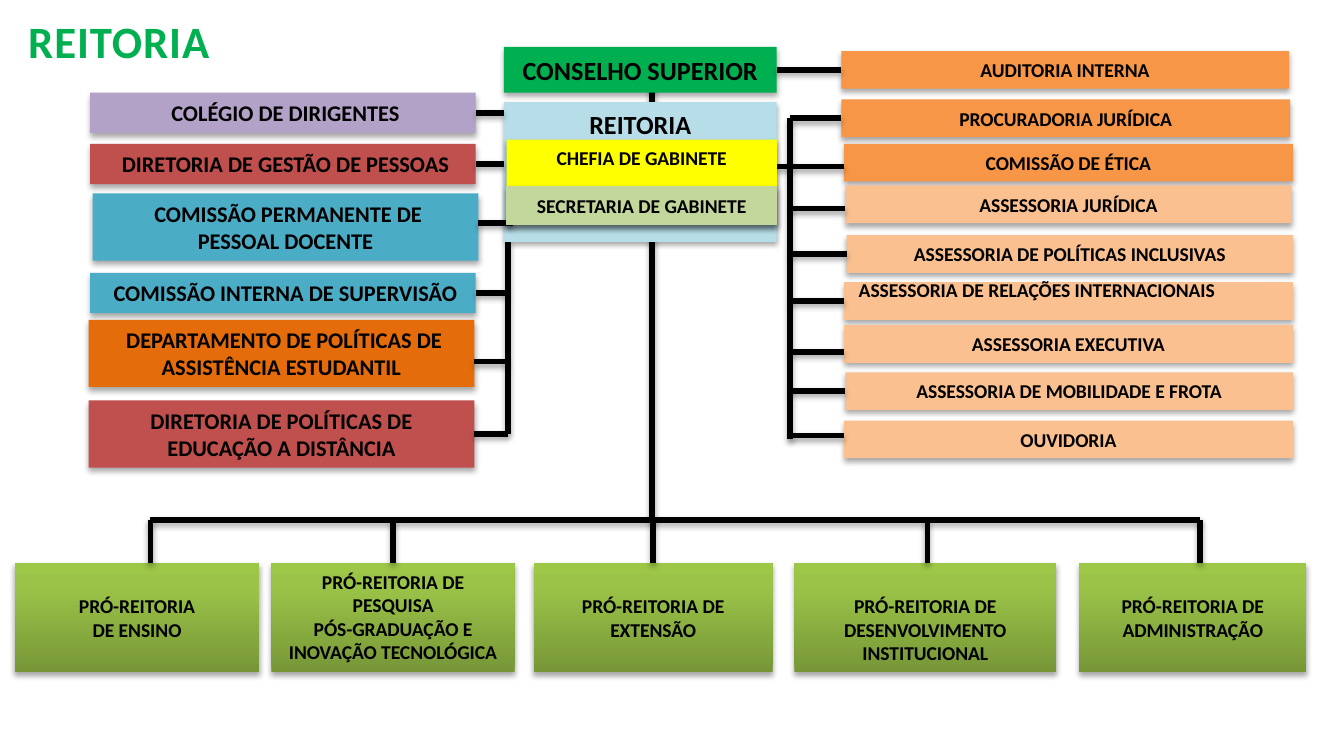
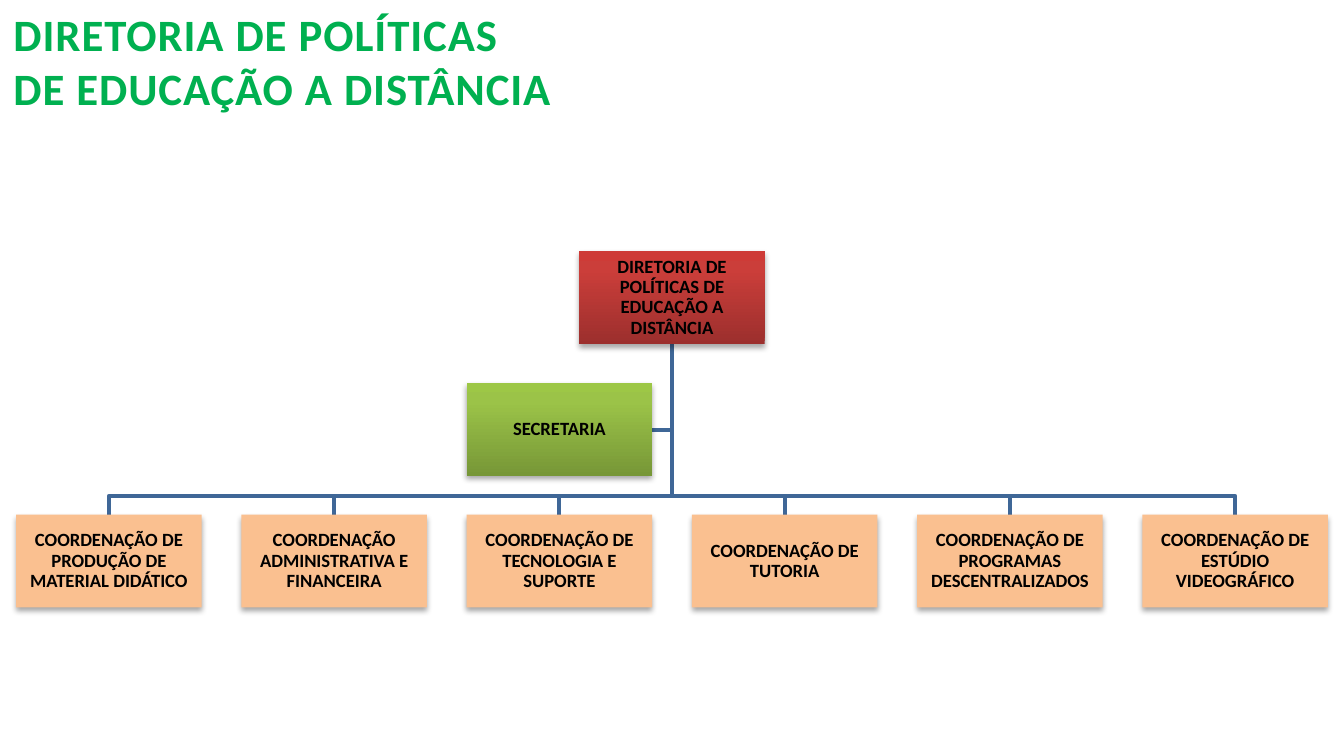
from copy import deepcopy

from lxml.etree import SubElement
from pptx import Presentation
from pptx.dml.color import RGBColor
from pptx.enum.shapes import MSO_CONNECTOR, MSO_SHAPE
from pptx.enum.text import MSO_ANCHOR, MSO_AUTO_SIZE, PP_ALIGN
from pptx.oxml.ns import qn
from pptx.util import Inches, Pt

FONT = "Calibri"
BLACK = RGBColor(0x00, 0x00, 0x00)
GREEN = RGBColor(0x00, 0xB0, 0x50)
SKY = RGBColor(0xB7, 0xDE, 0xE8)
YELLOW = RGBColor(0xFF, 0xFF, 0x00)
SAGE = RGBColor(0xC3, 0xD6, 0x9B)
ORANGE = RGBColor(0xF7, 0x96, 0x46)
DARK_ORANGE = RGBColor(0xE4, 0x6C, 0x0A)
PEACH = RGBColor(0xFA, 0xC0, 0x90)
PURPLE = RGBColor(0xB3, 0xA2, 0xC7)
RED = RGBColor(0xC0, 0x50, 0x4D)
TEAL = RGBColor(0x4B, 0xAC, 0xC6)
STEEL = RGBColor(0x3F, 0x67, 0x97)
# Gradients run from the bottom edge up, with stops at 0, 80 and 100 %.
LIME_GRADIENT = (RGBColor(0x77, 0x97, 0x37), RGBColor(0x9B, 0xC3, 0x48),
                 RGBColor(0x9D, 0xC7, 0x46))
RED_GRADIENT = (RGBColor(0x9C, 0x2F, 0x2D), RGBColor(0xCB, 0x3E, 0x3A),
                RGBColor(0xCE, 0x3B, 0x37))
STOPS = (0, 0.8, 1)

TOP, LEFT, BOTTOM, RIGHT = range(4)
LEFT_TRUNK, MAIN_TRUNK, RIGHT_TRUNK = 3.78, 4.85, 5.88
BUS_Y = 3.87
SIDE_H = 0.28

# text, left, top, width, height, fill, stub end, stub height (None: box middle)
LEFT_UNITS = [
    ("COLÉGIO DE DIRIGENTES", 0.67, 0.69, 2.87, 0.3, PURPLE, 3.75, None),
    ("DIRETORIA DE GESTÃO DE PESSOAS", 0.67, 1.07, 2.87, 0.3, RED, 3.75, None),
    ("COMISSÃO PERMANENTE DE PESSOAL DOCENTE",
     0.69, 1.44, 2.87, 0.5, TEAL, 3.82, 1.66),
    ("COMISSÃO INTERNA DE SUPERVISÃO",
     0.67, 2.03, 2.87, 0.3, TEAL, LEFT_TRUNK, None),
    ("DEPARTAMENTO DE POLÍTICAS DE ASSISTÊNCIA ESTUDANTIL",
     0.66, 2.38, 2.87, 0.5, DARK_ORANGE, LEFT_TRUNK, 2.69),
    ("DIRETORIA DE POLÍTICAS DE EDUCAÇÃO A DISTÂNCIA",
     0.66, 2.98, 2.87, 0.5, RED, LEFT_TRUNK, None),
]
RIGHT_UNITS = [
    ("PROCURADORIA JURÍDICA", 6.26, 0.74, 3.34, SIDE_H, ORANGE, RIGHT_TRUNK, None),
    ("COMISSÃO DE ÉTICA", 6.28, 1.07, 3.34, SIDE_H, ORANGE, 5.78, 1.24),
    ("ASSESSORIA JURÍDICA", 6.29, 1.38, 3.32, SIDE_H, PEACH, RIGHT_TRUNK, 1.55),
    ("ASSESSORIA DE POLÍTICAS INCLUSIVAS",
     6.3, 1.75, 3.32, SIDE_H, PEACH, RIGHT_TRUNK, None),
    ("ASSESSORIA DE RELAÇÕES INTERNACIONAIS",
     6.28, 2.1, 3.34, SIDE_H, PEACH, RIGHT_TRUNK, None),
    ("ASSESSORIA EXECUTIVA", 6.28, 2.42, 3.34, SIDE_H, PEACH, RIGHT_TRUNK, 2.62),
    ("ASSESSORIA DE MOBILIDADE E FROTA",
     6.29, 2.77, 3.33, SIDE_H, PEACH, RIGHT_TRUNK, None),
    ("OUVIDORIA", 6.28, 3.13, 3.34, SIDE_H, PEACH, RIGHT_TRUNK, 3.24),
]
# text, left, width, top inset, drop position (None: box middle)
PRO_REITORIAS = [
    ("PRÓ-REITORIA\nDE ENSINO", 0.11, 1.82, 0.23, 1.12),
    ("PRÓ-REITORIA DE PESQUISA\nPÓS-GRADUAÇÃO E INOVAÇÃO TECNOLÓGICA",
     2.02, 1.81, 0.05, None),
    ("PRÓ-REITORIA DE\nEXTENSÃO", 3.97, 1.78, 0.23, None),
    ("PRÓ-REITORIA DE DESENVOLVIMENTO\nINSTITUCIONAL", 5.91, 1.95, 0.23, 6.9),
    ("PRÓ-REITORIA DE\nADMINISTRAÇÃO", 8.03, 1.69, 0.23, 8.93),
]
COORDENACOES = [
    "COORDENAÇÃO DE PRODUÇÃO DE MATERIAL DIDÁTICO",
    "COORDENAÇÃO ADMINISTRATIVA E FINANCEIRA",
    "COORDENAÇÃO DE TECNOLOGIA E SUPORTE",
    "COORDENAÇÃO DE TUTORIA",
    "COORDENAÇÃO DE PROGRAMAS DESCENTRALIZADOS",
    "COORDENAÇÃO DE ESTÚDIO VIDEOGRÁFICO",
]


def format_text(tf, size, color, align):
    for p in tf.paragraphs:
        p.alignment = align
        for r in p.runs:
            r.font.name, r.font.size, r.font.bold = FONT, Pt(size), True
            r.font.color.rgb = color


def add_shadow(sp):
    """Append a soft shadow below; call it once fill and line are set."""
    effects = SubElement(sp._element.spPr, qn("a:effectLst"))
    shadow = SubElement(effects, qn("a:outerShdw"), blurRad=str(Pt(3.1)),
                        dist=str(Pt(1.8)), dir="5400000", rotWithShape="0")
    color = SubElement(shadow, qn("a:srgbClr"), val=str(BLACK))
    SubElement(color, qn("a:alpha"), val="35000")


def fill_shape(sp, fill):
    if isinstance(fill, RGBColor):
        sp.fill.solid()
        sp.fill.fore_color.rgb = fill
        return
    sp.fill.gradient()
    sp.fill.gradient_angle = 90
    stop_list = next(sp._element.spPr.iter(qn("a:gsLst")))
    stop_list.append(deepcopy(stop_list[0]))
    for stop, color, position in zip(sp.fill.gradient_stops, fill, STOPS):
        stop.color.rgb = color
        stop.position = position


def add_title(prs, text, left, top, width, height):
    s = prs.slides.add_slide(prs.slide_layouts[5])
    title = s.shapes.title
    title.left, title.top = Inches(left), Inches(top)
    title.width, title.height = Inches(width), Inches(height)
    tf = title.text_frame
    tf.text = text
    tf.word_wrap = True
    tf.auto_size = MSO_AUTO_SIZE.NONE
    tf.vertical_anchor = MSO_ANCHOR.TOP
    format_text(tf, 24, GREEN, PP_ALIGN.LEFT)
    for r in tf.paragraphs[0].runs:
        r.font._element.set("spc", "50")
    return s


def add_box(s, text, left, top, width, height, fill, size=10.5,
            anchor=MSO_ANCHOR.MIDDLE):
    sp = s.shapes.add_shape(MSO_SHAPE.RECTANGLE, Inches(left), Inches(top),
                            Inches(width), Inches(height))
    fill_shape(sp, fill)
    sp.line.fill.background()
    add_shadow(sp)
    tf = sp.text_frame
    tf.text = text
    tf.word_wrap = True
    tf.vertical_anchor = anchor
    format_text(tf, size, BLACK, PP_ALIGN.CENTER)
    return sp


def add_line(s, x1, y1, x2, y2):
    line = s.shapes.add_connector(MSO_CONNECTOR.STRAIGHT, Inches(x1), Inches(y1),
                                  Inches(x2), Inches(y2))
    line.line.color.rgb = BLACK
    line.line.width = Pt(3)
    add_shadow(line)
    return line


def add_side_units(s, units, size, side):
    """Stack the units of one side and tie each to its trunk; return the boxes."""
    boxes = []
    for text, left, top, width, height, fill, stub_x, stub_y in units:
        sp = add_box(s, text, left, top, width, height, fill, size)
        edge = left + width if side == RIGHT else left
        y = stub_y or top + height / 2
        line = add_line(s, edge, y, stub_x, y)
        if stub_y is None:
            line.begin_connect(sp, side)
        boxes.append(sp)
    return boxes


def add_core(s):
    add_box(s, "REITORIA", 3.75, 0.76, 2.03, 1.04, SKY, 14, MSO_ANCHOR.TOP)
    council = add_box(s, "CONSELHO SUPERIOR", 3.75, 0.35, 2.03, 0.34, GREEN, 14)
    audit = add_box(s, "AUDITORIA INTERNA", 6.26, 0.38, 3.33, SIDE_H, ORANGE)
    link = add_line(s, 5.78, 0.52, 6.26, 0.52)
    link.begin_connect(council, RIGHT)
    link.end_connect(audit, LEFT)


def add_cabinet(s):
    add_box(s, "CHEFIA DE GABINETE", 3.77, 1.04, 2.01, 0.63, YELLOW,
            anchor=MSO_ANCHOR.TOP)
    office = add_box(s, "SECRETARIA DE GABINETE", 3.77, 1.39, 2.01, SIDE_H, SAGE)
    office.line.color.rgb = SAGE
    office.line.width = Pt(0.75)


def add_pro_reitorias(s):
    for text, left, width, inset, drop_x in PRO_REITORIAS:
        sp = add_box(s, text, left, 4.19, width, 0.81, LIME_GRADIENT,
                     anchor=MSO_ANCHOR.TOP)
        sp.text_frame.margin_top = Inches(inset)
        x = drop_x or left + width / 2
        drop = add_line(s, x, BUS_Y, x, 4.19)
        if drop_x is None:
            drop.end_connect(sp, TOP)


def build_reitoria(prs):
    s = add_title(prs, "REITORIA", 0.11, 0.05, 2.36, 0.5)
    add_line(s, MAIN_TRUNK, 0.55, MAIN_TRUNK, BUS_Y)
    add_line(s, LEFT_TRUNK, 1.8, LEFT_TRUNK, 3.23)
    add_line(s, RIGHT_TRUNK, 0.88, RIGHT_TRUNK, 3.27)
    add_line(s, 1.12, BUS_Y, 8.93, BUS_Y)
    add_core(s)
    left_boxes = add_side_units(s, LEFT_UNITS, 12, RIGHT)
    for sp in left_boxes[:-1]:
        p = sp.text_frame.paragraphs[0]
        p._p.get_or_add_pPr().set("indent", str(Inches(0.04)))
    right_boxes = add_side_units(s, RIGHT_UNITS, 10.5, LEFT)
    tf = right_boxes[4].text_frame
    tf.paragraphs[0].alignment = PP_ALIGN.LEFT
    tf.margin_left = Inches(0.11)
    tf.margin_top, tf.margin_bottom = 0, Inches(0.17)
    add_cabinet(s)
    add_pro_reitorias(s)


def add_branch(s, *points):
    start, *rest = [(Inches(x), Inches(y)) for x, y in points]
    builder = s.shapes.build_freeform(*start)
    builder.add_line_segments(rest, close=False)
    sp = builder.convert_to_shape()
    sp.fill.background()
    sp.line.color.rgb = STEEL
    sp.line.width = Pt(2)
    sp.shadow.inherit = False


def build_diretoria(prs):
    s = add_title(prs, "DIRETORIA DE POLÍTICAS DE EDUCAÇÃO A DISTÂNCIA",
                  0, 0, 4.21, 0.91)
    width, height = 1.38, 0.69
    first, last, row, bus, center, head_bottom = 0.12, 8.5, 3.83, 3.69, 5, 2.56
    pitch = (last - first) / (len(COORDENACOES) - 1)
    columns = [first + i * pitch for i in range(len(COORDENACOES))]
    add_branch(s, (center, head_bottom), (center, 3.2), (4.85, 3.2))
    for left in columns:
        x = left + width / 2
        add_branch(s, (center, head_bottom), (center, bus), (x, bus), (x, row))
    cards = [("DIRETORIA DE POLÍTICAS DE EDUCAÇÃO A DISTÂNCIA",
              center - width / 2, 1.87, RED_GRADIENT),
             ("SECRETARIA", columns[2], 2.85, LIME_GRADIENT)]
    cards += [(text, left, row, PEACH) for text, left in zip(COORDENACOES, columns)]
    for text, left, top, fill in cards:
        tf = add_box(s, text, left, top, width, height, fill, 10).text_frame
        tf.margin_left = tf.margin_right = Inches(0.01)
        tf.margin_top = tf.margin_bottom = Inches(0.01)
        tf.paragraphs[0].line_spacing = 0.9


def main():
    prs = Presentation()
    prs.slide_width = Inches(10)
    prs.slide_height = prs.slide_width * 9 // 16
    build_reitoria(prs)
    build_diretoria(prs)
    prs.save("out.pptx")


if __name__ == "__main__":
    main()
